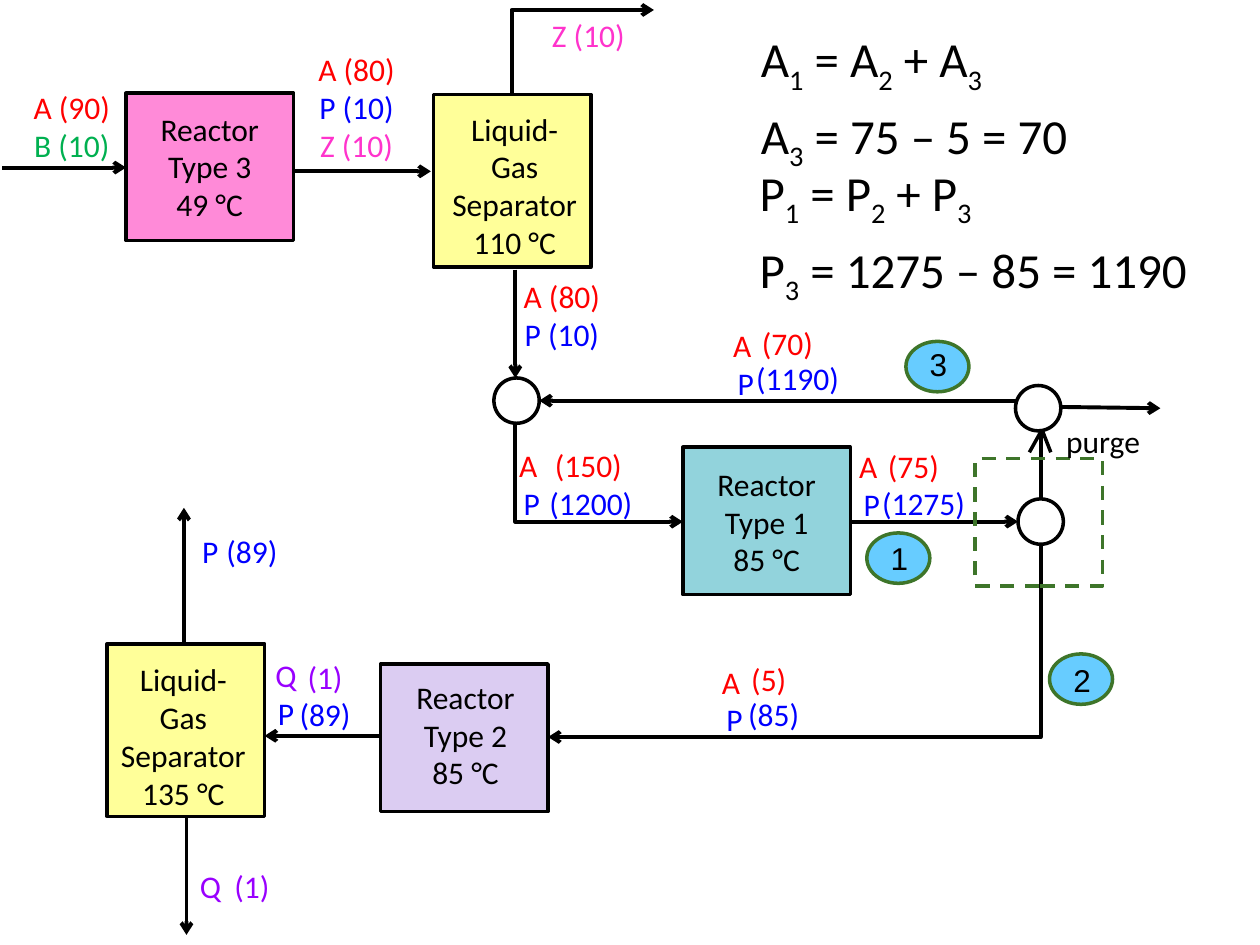
from dataclasses import dataclass

from lxml import etree
from pptx import Presentation, util as u
from pptx.dml.color import RGBColor
from pptx.enum import dml, shapes, text
from pptx.oxml.ns import qn

PX = u.Inches(1) // 100  # 100 px to the inch


@dataclass(frozen=True)
class Theme:
    ink: str = "000000"
    white: str = "FFFFFF"
    reactor_1: str = "92D3DC"
    reactor_2: str = "DBCCF2"
    reactor_3: str = "FF8AD8"
    separator: str = "FFFF99"
    badge: str = "67CCFF"
    accent: str = "3E752A"
    A: str = "FF0000"
    B: str = "00B050"
    P: str = "0000FF"
    Q: str = "9900FF"
    Z: str = "FF33CC"
    font: str = "Calibri"
    badge_font: str = "Arial"
    label_size: int = 18
    equation_size: int = 28
    outline: float = 2
    flow: float = 2.25


class Flowsheet:
    """Holds the theme and the slide being drawn; lengths are in px."""

    def __init__(self, slide, theme):
        self.slide, self.theme = slide, theme

    def outline(self, line, color, width):
        line.color.rgb = RGBColor.from_string(color)
        line.width = u.Pt(width)

    def shape(self, kind, box, fill=None, line=None, dashed=False):
        item = self.slide.shapes.add_shape(kind, *(v * PX for v in box))
        item.shadow.inherit = False
        if fill:
            item.fill.solid()
            item.fill.fore_color.rgb = RGBColor.from_string(fill)
        else:
            item.fill.background()
        self.outline(item.line, line or self.theme.ink, self.theme.outline)
        if dashed:
            item.line.dash_style = dml.MSO_LINE.DASH

    def unit(self, box, fill):
        self.shape(shapes.MSO_SHAPE.RECTANGLE, box, fill)

    def node(self, x, y, fill=None):
        self.shape(shapes.MSO_SHAPE.OVAL, (x, y, 36, 36), fill)

    def style(self, font, color, size, name):
        font.name, font.size = name, u.Pt(size)
        font.color.rgb = RGBColor.from_string(color)

    def frame(self, box, grow=True):
        frame = self.slide.shapes.add_textbox(*(v * PX for v in box)).text_frame
        frame.word_wrap = True
        if grow:
            frame.auto_size = text.MSO_AUTO_SIZE.SHAPE_TO_FIT_TEXT
        return frame

    def label(self, box, *lines, color=None, font=None, centred=True):
        """Write one paragraph a line; each takes its species colour unless one is given."""
        frame = self.frame(box)
        frame.text = "\n".join(lines)
        for paragraph in frame.paragraphs:
            if centred:
                paragraph.alignment = text.PP_ALIGN.CENTER
            for run in paragraph.runs:
                tint = color or getattr(self.theme, run.text[0])
                self.style(run.font, tint, self.theme.label_size, font or self.theme.font)

    def amounts(self, box, *pairs):
        """Write (amount, species) pairs, one a line, in the species colours."""
        frame = self.frame(box)
        frame.text = "\n".join(amount for amount, _ in pairs)
        for paragraph, (_, species) in zip(frame.paragraphs, pairs):
            paragraph.alignment = text.PP_ALIGN.CENTER
            self.style(paragraph.runs[0].font, getattr(self.theme, species),
                       self.theme.label_size, self.theme.font)

    def equations(self, box, *lines):
        """Write equations in which an underscore lowers the next character."""
        frame = self.frame(box, grow=False)
        for i, line in enumerate(lines):
            paragraph = frame.add_paragraph() if i else frame.paragraphs[0]
            paragraph.space_before = u.Pt(self.theme.equation_size * 0.2)
            first, *rest = line.split("_")
            pieces = [(first, False)]
            for part in rest:
                pieces += [(part[0], True), (part[1:], False)]
            for piece, lowered in pieces:
                if piece:
                    run = paragraph.add_run()
                    run.text = piece
                    self.style(run.font, self.theme.ink, self.theme.equation_size, self.theme.font)
                    if lowered:
                        run.font._element.set("baseline", "-25000")

    def badge(self, box, number, number_at):
        self.shape(shapes.MSO_SHAPE.OVAL, box, self.theme.badge, self.theme.accent)
        self.label((*number_at, 66, 40), number, color=self.theme.ink,
                   font=self.theme.badge_font, centred=False)

    def finish(self, connector, width, arrow):
        self.outline(connector.line, self.theme.ink, width)
        if arrow:
            etree.SubElement(connector.line._get_or_add_ln(), qn("a:tailEnd"), type="arrow")
        etree.SubElement(connector._element.spPr, qn("a:effectLst"))

    def flow(self, *ends):
        line = self.slide.shapes.add_connector(
            shapes.MSO_CONNECTOR.STRAIGHT, *(v * PX for v in ends))
        self.finish(line, self.theme.flow, arrow=True)

    def bend(self, x1, y1, x2, y2):
        """Draw an arrow that runs vertically first, then horizontally."""
        line = self.slide.shapes.add_connector(shapes.MSO_CONNECTOR.ELBOW, 0, 0, 0, 0)
        run, rise = abs(x2 - x1), abs(y2 - y1)
        line.left = (x1 + x2 - rise) * PX // 2
        line.top = (y1 + y2 - run) * PX // 2
        line.width, line.height = rise * PX, run * PX
        properties = line._element.spPr
        properties.find(qn("a:prstGeom")).set("prst", "bentConnector2")
        frame = properties.find(qn("a:xfrm"))
        frame.set("rot", str(90 * 60000))
        frame.set("flipH", str(int(y2 < y1)))
        frame.set("flipV", str(int(x2 > x1)))
        self.finish(line, self.theme.flow, arrow=True)

    def chevron(self, x, y, feet):
        """Draw an open arrowhead as a group of two strokes."""
        group = self.slide.shapes.add_group_shape()
        for foot_x, foot_y in feet:
            stroke = group.shapes.add_connector(
                shapes.MSO_CONNECTOR.STRAIGHT, x * PX, y * PX, foot_x * PX, foot_y * PX)
            self.finish(stroke, self.theme.outline, arrow=False)


def main():
    deck = Presentation()
    deck.slide_width, deck.slide_height = 1000 * PX, 750 * PX
    theme = Theme()
    sheet = Flowsheet(deck.slides.add_slide(deck.slide_layouts[6]), theme)

    reactor, separator = (133, 117), (125, 137)
    units = [
        ((100, 74, *reactor), theme.reactor_3, (100, 82, 133, 101), ("Reactor", "Type 3", "49 °C")),
        ((344, 75, *separator), theme.separator, (346, 82, 125, 131), ("Liquid-Gas Separator", "110 °C")),
        ((542, 355, *reactor), theme.reactor_1, (542, 364, 133, 101), ("Reactor", "Type 1", "85 °C")),
        ((302, 527, *reactor), theme.reactor_2, (303, 533, 133, 101), ("Reactor", "Type 2", "85 °C")),
        ((85, 511, *separator), theme.separator, (83, 519, 125, 131), ("Liquid-Gas Separator", "135 °C")),
    ]
    for box, fill, caption_box, caption in units:
        sheet.unit(box, fill)
        sheet.label(caption_box, *caption, color=theme.ink)

    for ends in [(2, 133, 100, 133), (233, 136, 342, 136), (409, 214, 409, 300),
                 (675, 414, 808, 414), (303, 584, 210, 584), (148, 649, 148, 742),
                 (146, 510, 146, 403), (843, 323, 921, 324)]:
        sheet.flow(*ends)
    for ends in [(406, 75, 519, 8), (409, 336, 542, 414),
                 (826, 396, 428, 318), (826, 432, 435, 585)]:
        sheet.bend(*ends)

    sheet.node(392, 300)
    sheet.node(808, 396)
    sheet.node(806, 306, theme.white)
    sheet.chevron(827, 341, [(817, 359), (834, 359)])
    sheet.shape(shapes.MSO_SHAPE.RECTANGLE, (774, 364, 101, 101), line=theme.accent, dashed=True)

    sheet.label((8, 65, 98, 71), "A (90)", "B (10)")
    sheet.label((183, 35, 200, 101), "A (80)", "P (10)", "Z (10)")
    sheet.label((367, 8, 200, 40), "Z (10)")
    sheet.label((346, 215, 200, 71), "A (80)", "P (10)")
    sheet.label((127, 516, 200, 71), "Q", "P")
    sheet.label((67, 683, 200, 40), "Q")
    sheet.label((67, 417, 200, 40), "P")
    for x, y in [(592, 350), (322, 349), (492, 254), (483, 521)]:
        sheet.label((x, y, 200, 71), "A ", "P")
    sheet.label((809, 330, 133, 40), "purge", color=theme.ink)

    sheet.amounts((158, 517, 200, 71), ("(1)", "Q"), ("(89)", "P"))
    for x, y, amount, species in [
        (513, 519, "(5) ", "A"), (514, 547, "(85)", "P"),
        (367, 349, "(150)", "A"), (369, 379, "(1200)", "P"),
        (625, 350, "(75)", "A"), (633, 379, "(1275)", "P"),
        (525, 252, "(70)", "A"), (533, 280, "(1190)", "P"),
        (100, 417, "(89)", "P"), (100, 683, "(1)", "Q"),
    ]:
        sheet.amounts((x, y, 200, 40), (amount, species))

    sheet.equations((594, 18, 362, 131), "A_1 = A_2 + A_3", "A_3 = 75 – 5 = 70")
    sheet.equations((593, 124, 398, 131), "P_1 = P_2 + P_3", "P_3 = 1275 – 85 = 1190")

    for x, y, number, number_y in [(688, 423, "1", 423), (833, 519, "2", 520), (719, 271, "3", 269)]:
        sheet.badge((x, y, 50, 40), number, (x + 9, number_y))

    deck.save("out.pptx")


if __name__ == "__main__":
    main()
